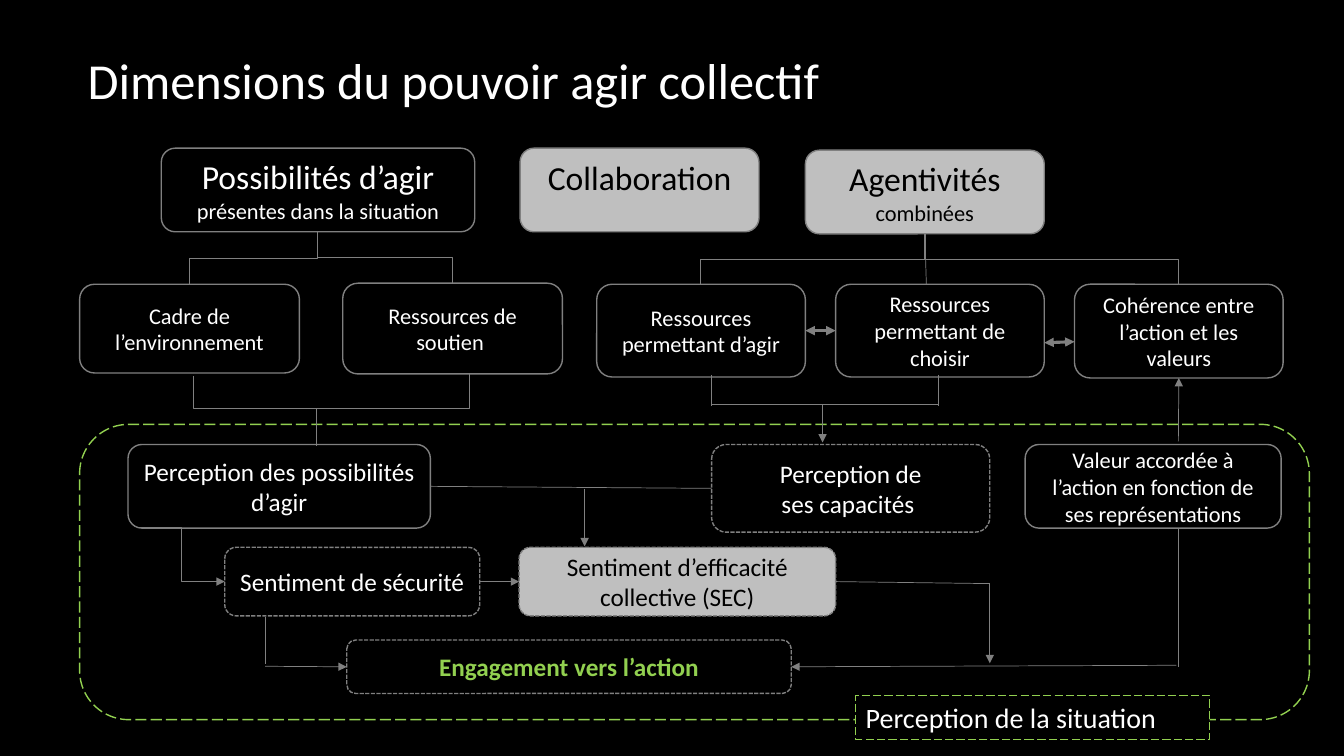
from dataclasses import dataclass
from typing import Optional, Union

from lxml.etree import SubElement
from pptx import Presentation
from pptx.dml.color import RGBColor
from pptx.enum.dml import MSO_LINE
from pptx.enum.shapes import MSO_CONNECTOR, MSO_SHAPE
from pptx.enum.text import MSO_ANCHOR, PP_ALIGN
from pptx.oxml.ns import qn
from pptx.shapes.autoshape import Shape
from pptx.shapes.connector import Connector
from pptx.slide import Slide
from pptx.text.text import TextFrame
from pptx.util import Inches, Length, Pt

BLACK = RGBColor(0x00, 0x00, 0x00)
WHITE = RGBColor(0xFF, 0xFF, 0xFF)
GREY = RGBColor(0x80, 0x80, 0x80)
SILVER = RGBColor(0xBF, 0xBF, 0xBF)
GREEN = RGBColor(0x92, 0xD0, 0x50)

COLUMNS, ROWS = 133.33, 75
TOP, LEFT, BOTTOM, RIGHT = 0, 1, 2, 3


def cells(count: float) -> Length:
    return Inches(count / 10)


@dataclass(frozen=True)
class Line:
    text: str
    size: float
    bold: bool = False


@dataclass(frozen=True)
class Box:
    col: float
    row: float
    cols: float
    rows: float
    lines: tuple[Line, ...] = ()
    fill: Optional[RGBColor] = None
    ink: RGBColor = WHITE
    border: RGBColor = GREY
    dash: Optional[MSO_LINE] = None
    weight: float = 1
    outline: MSO_SHAPE = MSO_SHAPE.ROUNDED_RECTANGLE
    anchor: MSO_ANCHOR = MSO_ANCHOR.MIDDLE
    align: PP_ALIGN = PP_ALIGN.CENTER


@dataclass(frozen=True)
class Point:
    col: float
    row: float


@dataclass(frozen=True)
class Joint:
    box: str
    side: int


@dataclass(frozen=True)
class Link:
    start: Union[Point, Joint]
    end: Union[Point, Joint]
    arrows: tuple[str, ...] = ()
    weight: float = 0.5


@dataclass(frozen=True)
class Elbow:
    start: Point
    end: Point
    downward: bool = True
    bend: float = 0.5
    arrows: tuple[str, ...] = ()


HEAD, TAIL = "headEnd", "tailEnd"
DASHED = MSO_LINE.SQUARE_DOT
LONG = MSO_LINE.LONG_DASH

BOXES = {
    "situation": Box(7.9, 42.1, 122, 29.3, border=GREEN, dash=LONG),
    "possibilités": Box(16, 14.7, 31.1, 8.3, (
        Line("Possibilités d’agir", 24), Line("présentes dans la situation", 16))),
    "collaboration": Box(51.6, 14.7, 23.7, 8.3, (Line("Collaboration", 24),),
                         SILVER, BLACK, anchor=MSO_ANCHOR.TOP),
    "agentivités": Box(79.9, 14.9, 23.7, 8.3, (
        Line("Agentivités", 24), Line("combinées", 16)), SILVER, BLACK),
    "cadre": Box(7.9, 28.2, 21.8, 8.8, (Line("Cadre de l’environnement", 16),)),
    "soutien": Box(34, 28.1, 21.8, 9, (Line("Ressources de soutien ", 16),)),
    "agir": Box(59.2, 28.2, 20.7, 9.2, (Line("Ressources permettant d’agir", 16),)),
    "choisir": Box(82.9, 28.2, 20.7, 9.2, (
        Line("Ressources permettant de choisir", 16),)),
    "cohérence": Box(106.6, 28.2, 20.7, 9.3, (
        Line("Cohérence entre l’action et les valeurs", 16),)),
    "perception": Box(12.7, 44.1, 30, 8.3, (
        Line("Perception des possibilités d’agir", 18),)),
    "capacités": Box(70.6, 44.1, 27.6, 8.7, (
        Line("Perception de", 18), Line("ses capacités ", 18)), BLACK, dash=DASHED),
    "valeur": Box(101.7, 44.1, 25.4, 8.3, (
        Line("Valeur accordée à l’action en fonction de ses représentations", 16),)),
    "sécurité": Box(22.3, 54.3, 25.3, 6.8, (Line("Sentiment de sécurité", 18),),
                    BLACK, dash=DASHED),
    "efficacité": Box(51.5, 54.3, 31.4, 6.8, (
        Line("Sentiment d’efficacité collective (SEC)", 18),), SILVER, BLACK, dash=DASHED),
    "engagement": Box(34.4, 63.5, 44.1, 5.3, (
        Line("Engagement vers l’action", 18, True),), BLACK, GREEN, dash=DASHED),
    "légende": Box(84.9, 69, 35.1, 4.4, (Line("Perception de la situation", 20),),
                   BLACK, WHITE, GREEN, LONG, 0.75, MSO_SHAPE.RECTANGLE,
                   MSO_ANCHOR.TOP, PP_ALIGN.LEFT),
}

ELBOWS = (
    Elbow(Point(91.7, 23.2), Point(116.9, 28.2)),
    Elbow(Point(91.8, 23.2), Point(69.5, 28.2)),
    Elbow(Point(31.5, 23), Point(18.8, 28.2)),
    Elbow(Point(31.5, 23), Point(44.9, 28.1)),
    Elbow(Point(46.6, 37), Point(31.4, 44.1)),
    Elbow(Point(19.2, 37.3), Point(31.4, 44.3), bend=0.46),
    Elbow(Point(13.7, 52.3), Point(22.3, 57.7), downward=False, arrows=(TAIL,)),
)

LINKS = (
    Link(Joint("agentivités", BOTTOM), Point(91.9, 28.2)),
    Link(Joint("agir", RIGHT), Joint("choisir", LEFT), (HEAD, TAIL), 2.25),
    Link(Point(103.6, 34), Point(106.6, 33.9), (HEAD, TAIL), 2.25),
    Link(Point(116.9, 43.8), Joint("cohérence", BOTTOM), (TAIL,)),
    Link(Point(70.6, 40.1), Point(93.1, 40.1)),
    Link(Point(70.6, 37.2), Point(70.6, 40.3)),
    Link(Point(93.1, 37.2), Point(93.1, 40.3)),
    Link(Point(81.6, 40.2), Point(81.6, 43.9), (TAIL,)),
    Link(Joint("perception", RIGHT), Joint("capacités", LEFT)),
    Link(Point(58, 48.5), Point(58, 54.2), (TAIL,)),
    Link(Joint("sécurité", RIGHT), Joint("efficacité", LEFT), (TAIL,)),
    Link(Joint("efficacité", RIGHT), Point(98.2, 57.9)),
    Link(Point(98.2, 57.9), Point(98.2, 65.8), (TAIL,)),
    Link(Point(116.9, 52.4), Point(116.9, 66.2)),
    Link(Point(116.7, 66), Joint("engagement", RIGHT), (TAIL,)),
    Link(Point(26.3, 61.2), Point(26.3, 65.9)),
    Link(Point(26.3, 66.1), Joint("engagement", LEFT), (TAIL,)),
)


def write(frame: TextFrame, lines: tuple[Line, ...], ink: RGBColor,
          anchor: MSO_ANCHOR, align: PP_ALIGN) -> None:
    for name, value in {"word_wrap": True, "vertical_anchor": anchor}.items():
        setattr(frame, name, value)
    for index, line in enumerate(lines):
        paragraph = frame.add_paragraph() if index else frame.paragraphs[0]
        paragraph.alignment = align
        run = paragraph.add_run()
        run.text = line.text
        run.font.color.rgb = ink
        font_format = {"name": "Calibri", "size": Pt(line.size), "bold": line.bold}
        for name, value in font_format.items():
            setattr(run.font, name, value)


def draw_box(slide: Slide, box: Box) -> Shape:
    shape = slide.shapes.add_shape(
        box.outline, cells(box.col), cells(box.row), cells(box.cols), cells(box.rows))
    shape.shadow.inherit = False
    if box.fill is None:
        shape.fill.background()
    else:
        shape.fill.solid()
        shape.fill.fore_color.rgb = box.fill
    shape.line.color.rgb = box.border
    for name, value in {"width": Pt(box.weight), "dash_style": box.dash}.items():
        setattr(shape.line, name, value)
    write(shape.text_frame, box.lines, box.ink, box.anchor, box.align)
    return shape


def style_connector(connector: Connector, weight: float, arrows: tuple[str, ...]) -> None:
    connector.line.color.rgb = GREY
    connector.line.width = Pt(weight)
    properties = connector._element.spPr
    for arrow in arrows:
        SubElement(properties.find(qn("a:ln")), qn(f"a:{arrow}"), type="triangle")
    SubElement(properties, qn("a:effectLst"))


def draw_link(slide: Slide, link: Link, shapes: dict[str, Shape]) -> None:
    start, end = (Point(0, 0) if isinstance(tip, Joint) else tip
                  for tip in (link.start, link.end))
    connector = slide.shapes.add_connector(
        MSO_CONNECTOR.STRAIGHT, cells(start.col), cells(start.row),
        cells(end.col), cells(end.row))
    for tip, join in ((link.start, connector.begin_connect), (link.end, connector.end_connect)):
        if isinstance(tip, Joint):
            join(shapes[tip.box], tip.side)
    style_connector(connector, link.weight, link.arrows)


def draw_elbow(slide: Slide, elbow: Elbow) -> None:
    start, end = elbow.start, elbow.end
    connector = slide.shapes.add_connector(
        MSO_CONNECTOR.ELBOW, cells(start.col), cells(start.row),
        cells(end.col), cells(end.row))
    properties = connector._element.spPr
    if elbow.downward:
        across, down = abs(end.col - start.col), end.row - start.row
        turned = {"left": (start.col + end.col - down) / 2,
                  "top": (start.row + end.row - across) / 2,
                  "width": down, "height": across}
        for name, value in turned.items():
            setattr(connector, name, cells(value))
        rightward = end.col > start.col
        properties.xfrm.set("rot", str((270 if rightward else 90) * 60000))
        properties.xfrm.set("flipH", str(int(rightward)))
    guides = properties.find(qn("a:prstGeom")).find(qn("a:avLst"))
    SubElement(guides, qn("a:gd"), name="adj1", fmla=f"val {round(elbow.bend * 100000)}")
    style_connector(connector, 0.5, elbow.arrows)


def main() -> None:
    deck = Presentation()
    deck.slide_width, deck.slide_height = cells(COLUMNS), cells(ROWS)
    slide = deck.slides.add_slide(deck.slide_layouts[6])
    slide.background.fill.solid()
    slide.background.fill.fore_color.rgb = BLACK
    title = slide.shapes.add_textbox(cells(7.7), cells(4.4), cells(93), cells(7.1))
    write(title.text_frame, (Line("Dimensions du pouvoir agir collectif", 36),),
          WHITE, MSO_ANCHOR.TOP, PP_ALIGN.LEFT)
    shapes = {name: draw_box(slide, box) for name, box in BOXES.items()}
    for elbow in ELBOWS:
        draw_elbow(slide, elbow)
    for link in LINKS:
        draw_link(slide, link, shapes)
    deck.save("out.pptx")


if __name__ == "__main__":
    main()
